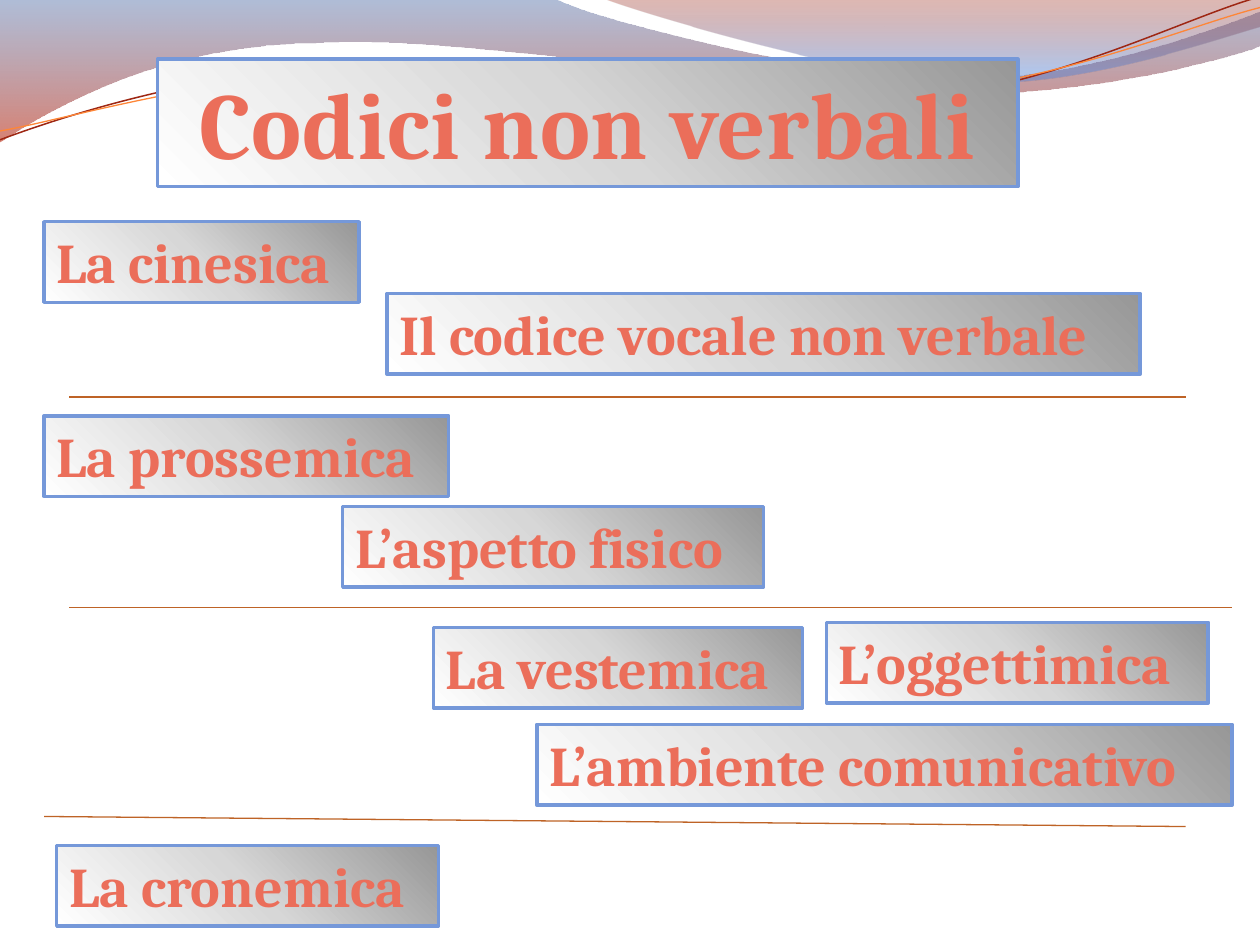
from itertools import chain
from lxml.etree import Element, SubElement
from pptx import Presentation
from pptx.dml.color import RGBColor
from pptx.enum.shapes import MSO_CONNECTOR, MSO_SHAPE
from pptx.enum.text import MSO_ANCHOR, PP_ALIGN
from pptx.oxml import parse_xml
from pptx.oxml.ns import nsdecls, qn
from pptx.util import Inches, Pt

COLORS = {
    "text": "EB6E5A", "border": "7598D9", "rule": "BE6326",
    "dark_wave": "9E2713", "orange_wave": "FE8637",
    "gray": "979797", "silver": "D7D7D7", "white": "FFFFFF",
    "blue": "4F6EA8", "red": "B61A00", "maroon": "951500", "sky": "5681D1",
}
FONT = "Cambria"
BOX_STOPS = [(0, "gray", 100), (50, "silver", 100), (100, "white", 100)]

# Each segment holds one point (straight line) or three points (Bezier curve).
BANDS = [
    ((0, -0.01), [
        [(4.4, -0.01)],
        [(4.76, 0.17), (6.64, 0.63), (7.58, 0.63)],
        [(8.53, 0.63), (9.58, 0.26), (10, 0.09)],
        [(10.01, 0.36)],
        [(9.83, 0.44), (8.7, 0.76), (7.46, 0.75)],
        [(6.22, 0.75), (3.82, 0.28), (2.57, 0.34)],
        [(1.29, 0.35), (0.46, 0.83), (-0.01, 1.13)],
    ], [(0, "blue", 45), (100, "red", 55)]),
    ((4.79, -0.01), [
        [(5.09, 0.11), (6.82, 0.62), (7.69, 0.65)],
        [(8.56, 0.69), (9.61, 0.32), (10, 0.21)],
        [(10, 0)],
    ], [(0, "maroon", 30), (80, "sky", 45)]),
]
WAVES = [
    ((0, 1.11), [
        [(0.48, 0.93), (1.58, 0.57), (2.77, 0.52)],
        [(3.95, 0.47), (5.93, 0.89), (7.13, 0.8)],
        [(8.33, 0.71), (9.38, 0.15), (9.98, -0.02)],
    ], "dark_wave", 0.85),
    ((0, 1.04), [
        [(0.47, 0.96), (1.64, 0.61), (2.83, 0.56)],
        [(4.03, 0.51), (5.97, 0.83), (7.17, 0.75)],
        [(8.36, 0.67), (9.41, 0.21), (10, 0.06)],
    ], "orange_wave", 0.75),
]
TITLE = ("Codici non verbali", 1.25, 0.47, 6.83)
CODES = [
    ("La cinesica", 0.35, 1.76, 2.5),
    ("La prossemica", 0.35, 3.3, 3.21),
    ("La vestemica", 3.44, 4.98, 2.93),
    ("L’oggettimica", 6.56, 4.94, 3.03),
    ("Il codice vocale non verbale", 3.07, 2.33, 5.98),
    ("L’aspetto fisico", 2.72, 4.02, 3.34),
    ("L’ambiente comunicativo", 4.26, 5.75, 5.52),
    ("La cronemica", 0.45, 6.71, 3.03),
]
RULES = [(0.55, 3.15, 9.41, 3.15), (0.55, 4.82, 9.78, 4.82), (0.35, 6.48, 9.41, 6.56)]


def rgb(name):
    return RGBColor.from_string(COLORS[name])


def set_line(line, color, width):
    line.color.rgb = rgb(color)
    line.width = Pt(width)


def set_gradient(sp, stops, angle):
    marks = "".join(
        f'<a:gs pos="{pos * 1000}"><a:srgbClr val="{COLORS[name]}">'
        f'<a:alpha val="{alpha * 1000}"/></a:srgbClr></a:gs>'
        for pos, name, alpha in stops)
    grad = parse_xml(f'<a:gradFill {nsdecls("a")} rotWithShape="1"><a:gsLst>{marks}'
                     f'</a:gsLst><a:lin ang="{angle * 60000}" scaled="0"/></a:gradFill>')
    sp.fill.background()
    spPr = sp._element.spPr
    spPr.replace(spPr.find(qn("a:noFill")), grad)


def add_outline(shapes, start, segments, close):
    points = [(Inches(x), Inches(y)) for x, y in chain([start], *segments)]
    builder = shapes.build_freeform(*points[0])
    builder.add_line_segments(points[1:], close=close)
    sp = builder.convert_to_shape()
    sp.shadow.inherit = False
    steps = iter(list(sp._element.iter(qn("a:lnTo"))))
    for seg in segments:
        group = [next(steps) for _ in seg]
        if len(group) == 3:
            curve = Element(qn("a:cubicBezTo"))
            group[0].addprevious(curve)
            for step in group:
                curve.append(step[0])
                step.getparent().remove(step)
    return sp


def add_box(shapes, text, left, top, width, height, size, align):
    sp = shapes.add_shape(MSO_SHAPE.RECTANGLE, Inches(left), Inches(top),
                          Inches(width), Inches(height))
    sp.shadow.inherit = False
    set_gradient(sp, BOX_STOPS, 135)
    set_line(sp.line, "border", 2)
    tf = sp.text_frame
    tf.word_wrap = True
    tf.vertical_anchor = MSO_ANCHOR.TOP
    p = tf.paragraphs[0]
    p.text = text
    p.alignment = align
    p.font.name = FONT
    p.font.size = Pt(size)
    p.font.bold = True
    p.font.color.rgb = rgb("text")
    return p.runs[0]


def main():
    prs = Presentation()
    prs.slide_width, prs.slide_height = Inches(10), Inches(7.5)
    shapes = prs.slides.add_slide(prs.slide_layouts[6]).shapes

    for start, segments, stops in BANDS:
        sp = add_outline(shapes, start, segments, True)
        set_gradient(sp, stops, 90)
        sp.line.fill.background()
    for start, segments, color, width in WAVES:
        sp = add_outline(shapes, start, segments, False)
        sp.fill.background()
        set_line(sp.line, color, width)

    r = add_box(shapes, *TITLE, 1.01, 54, PP_ALIGN.CENTER)
    r._r.get_or_add_rPr().set("spc", "50")
    for code in CODES:
        add_box(shapes, *code, 0.64, 32, PP_ALIGN.LEFT)

    for ends in RULES:
        rule = shapes.add_connector(MSO_CONNECTOR.STRAIGHT, *map(Inches, ends))
        set_line(rule.line, "rule", 0.75)
        SubElement(rule._element.spPr, qn("a:effectLst"))

    prs.save("out.pptx")


if __name__ == "__main__":
    main()
